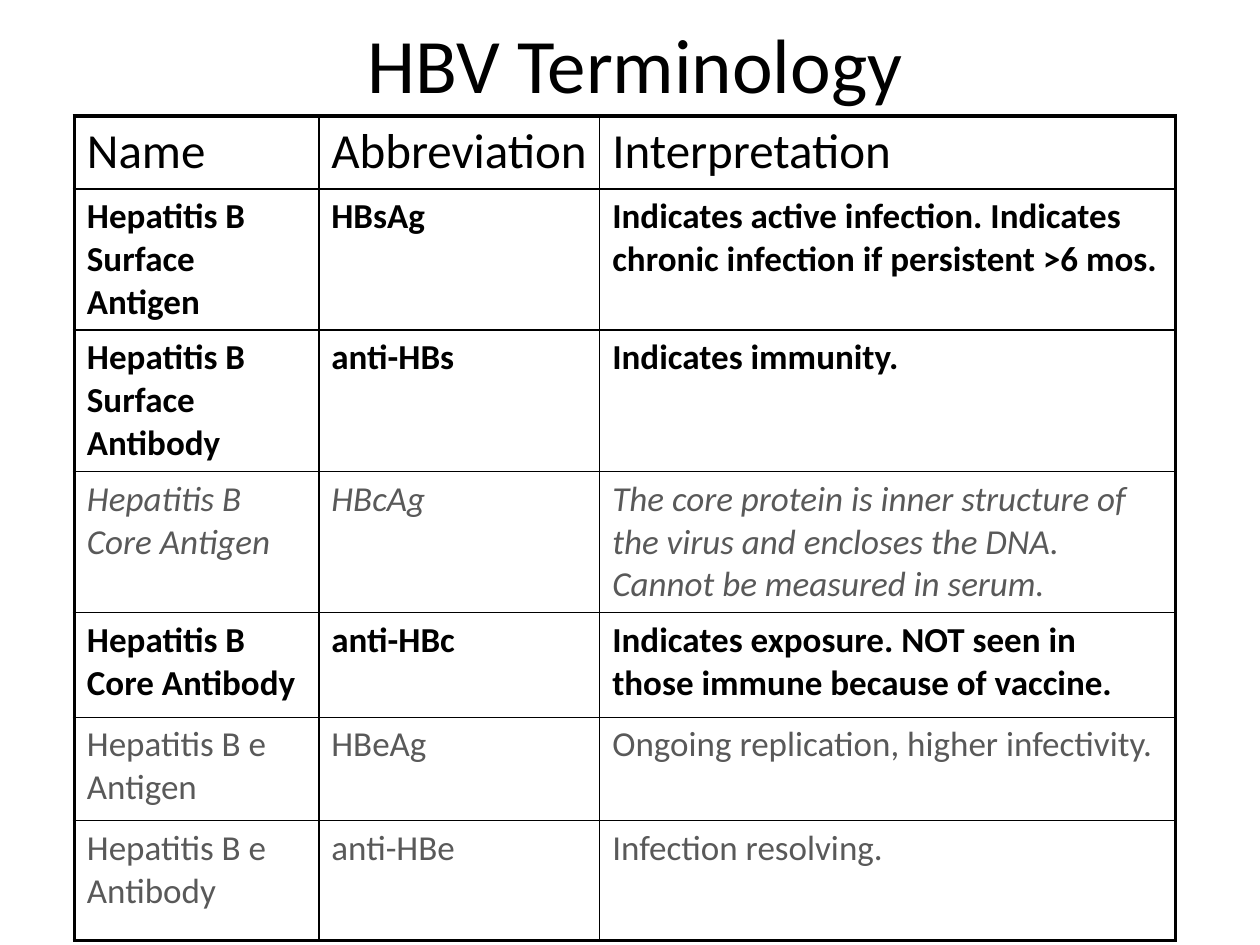
from dataclasses import dataclass

from lxml.etree import SubElement
from pptx import Presentation
from pptx.dml.color import RGBColor
from pptx.enum.text import MSO_AUTO_SIZE, PP_ALIGN
from pptx.oxml.ns import qn
from pptx.util import Inches, Pt

FONT = "Calibri"
BLACK, GRAY = "000000", "595959"
THIN, THICK = 1, 2.25
COL_WIDTHS = (1.94, 2.23, 4.57)
ROW_HEIGHTS = (0.58, 1.08, 1.08, 1.08, 0.83, 0.82, 0.95)


@dataclass(frozen=True)
class Style:
    size: float
    color: str = BLACK
    bold: bool = False
    italic: bool = False


@dataclass(frozen=True)
class Term:
    name: str
    abbreviation: str
    interpretation: str
    style: Style


TITLE = Style(44)
HEADER = Style(28)
KEY = Style(20, bold=True)
MINOR = Style(20, GRAY)
UNMEASURED = Style(20, GRAY, italic=True)

TERMS = (
    Term("Name", "Abbreviation", "Interpretation", HEADER),
    Term("Hepatitis B Surface Antigen", "HBsAg",
         "Indicates active infection. Indicates chronic infection if persistent >6 mos.", KEY),
    Term("Hepatitis B Surface Antibody", "anti-HBs", "Indicates immunity.", KEY),
    Term("Hepatitis B Core Antigen", "HBcAg",
         "The core protein is inner structure of the virus and encloses the DNA. "
         "Cannot be measured in serum.", UNMEASURED),
    Term("Hepatitis B Core Antibody", "anti-HBc",
         "Indicates exposure. NOT seen in those immune because of vaccine.", KEY),
    Term("Hepatitis B e Antigen", "HBeAg", "Ongoing replication, higher infectivity.", MINOR),
    Term("Hepatitis B e Antibody", "anti-HBe", "Infection resolving.", MINOR),
)


def rgb(color: str) -> RGBColor:
    return RGBColor.from_string(color)


def write(tf, text: str, style: Style):
    tf.text = text
    p = tf.paragraphs[0]
    font = p.runs[0].font
    font.name, font.size = FONT, Pt(style.size)
    font.bold, font.italic = style.bold, style.italic
    font.color.rgb = rgb(style.color)
    return p


def space_before(p, percent: int) -> None:
    spacing = SubElement(p._p.get_or_add_pPr(), qn("a:spcBef"))
    SubElement(spacing, qn("a:spcPct"), val=str(percent * 1000))


def set_borders(cell, widths: dict[str, float]) -> None:
    tc_pr = cell._tc.get_or_add_tcPr()
    for side, width in widths.items():
        ln = SubElement(tc_pr, qn(f"a:ln{side}"), w=str(Pt(width)))
        fill = SubElement(ln, qn("a:solidFill"))
        SubElement(fill, qn("a:srgbClr"), val=BLACK)


def add_terms(s) -> None:
    rows, cols = len(TERMS), len(COL_WIDTHS)
    frame = s.shapes.add_table(rows, cols, Inches(0.59), Inches(0.92),
                               Inches(sum(COL_WIDTHS)), Inches(sum(ROW_HEIGHTS)))
    table = frame.table
    table.first_row = table.horz_banding = False
    for column, width in zip(table.columns, COL_WIDTHS):
        column.width = Inches(width)
    for i, (term, height) in enumerate(zip(TERMS, ROW_HEIGHTS)):
        table.rows[i].height = Inches(height)
        for j, text in enumerate((term.name, term.abbreviation, term.interpretation)):
            cell = table.cell(i, j)
            space_before(write(cell.text_frame, text, term.style), 20)
            # Thick outer frame, thin inner grid
            outer = {"L": j == 0, "R": j == cols - 1, "T": i == 0, "B": i == rows - 1}
            set_borders(cell, {side: THICK if edge else THIN for side, edge in outer.items()})
            cell.fill.background()


def add_title(s) -> None:
    box = s.shapes.add_textbox(Inches(1.75), Inches(0.08), Inches(6.58), Inches(0.84))
    tf = box.text_frame
    tf.word_wrap = True
    tf.auto_size = MSO_AUTO_SIZE.SHAPE_TO_FIT_TEXT
    write(tf, "HBV Terminology", TITLE).alignment = PP_ALIGN.CENTER


def main() -> None:
    prs = Presentation()
    prs.slide_width, prs.slide_height = Inches(10), Inches(7.5)
    s = prs.slides.add_slide(prs.slide_layouts[6])
    add_terms(s)
    add_title(s)
    prs.save("out.pptx")


if __name__ == "__main__":
    main()
